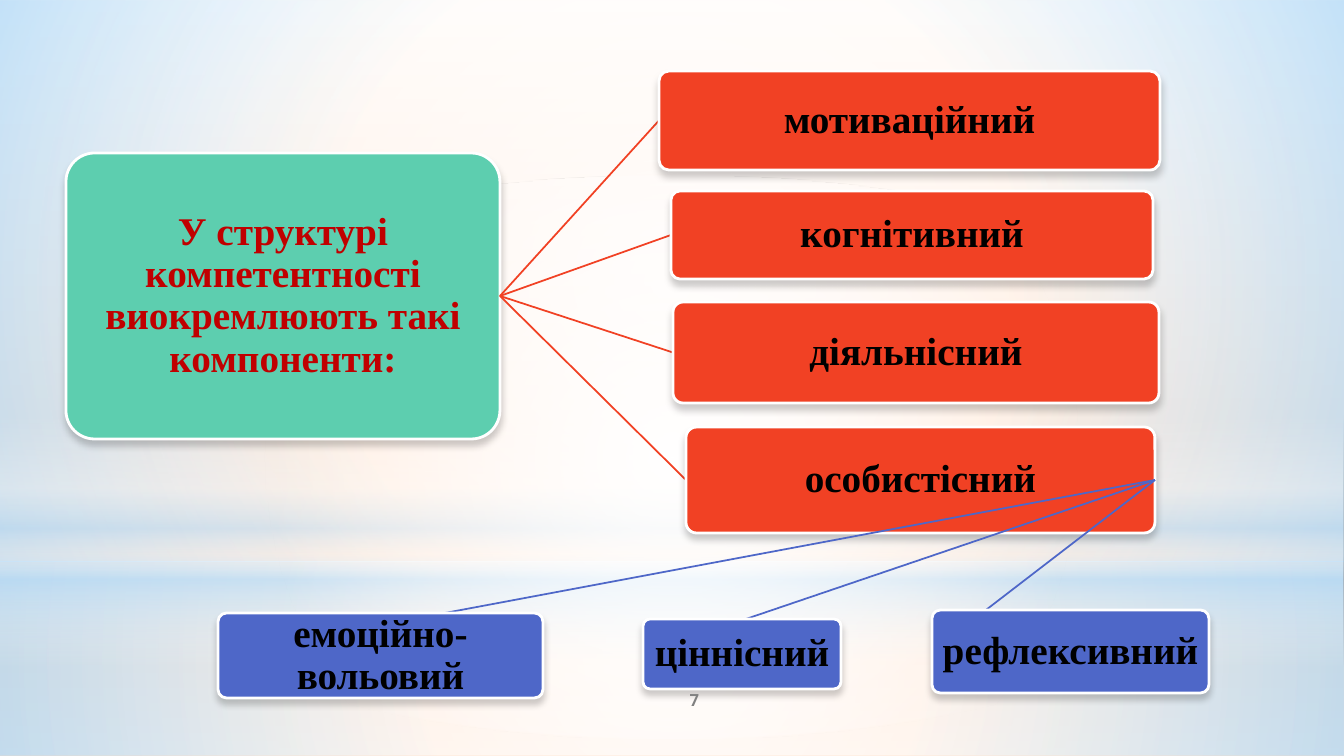
from dataclasses import dataclass
from typing import NamedTuple, Optional

import pptx
import pptx.dml.color
import pptx.enum.shapes
import pptx.enum.text
import pptx.oxml
import pptx.oxml.ns
import pptx.util
from lxml import etree

EMU_PER_PX = 914400 / 100.8
SHAPE = pptx.enum.shapes.MSO_SHAPE
RIGHT_SIDE, LEFT_SIDE = 3, 1


@dataclass(frozen=True)
class Theme:
    root: str = "5DCEAF"
    component: str = "F14124"
    personal: str = "4E67C8"
    outline: str = "FFFFFF"
    heading: str = "C00000"
    label: str = "000000"
    page: str = "808080"
    sky: str = "B4DCFA"
    white: str = "FFFFFF"
    label_font: str = "Times New Roman"
    page_font: str = "Roboto"
    label_size: int = 28
    page_size: int = 12


THEME = Theme()


class Area(NamedTuple):
    left: int
    top: int
    width: int
    height: int

    def emu(self) -> list[pptx.util.Emu]:
        return [px(length) for length in self]


class Stop(NamedTuple):
    position: int
    color: str
    opacity: int = 100


class Glow(NamedTuple):
    kind: int
    area: Area
    stops: list[Stop]
    radial: bool = True


class Node(NamedTuple):
    text: str
    area: Area
    fill: str
    color: str = THEME.label
    children: tuple["Node", ...] = ()


BACKGROUND = [Stop(0, "FFF9F4"), Stop(74, "FFC69B"), Stop(83, "FFC69B"), Stop(100, "FFD9BC")]

GLOWS = [
    Glow(SHAPE.RECTANGLE, Area(0, 562, 1344, 194),
         [Stop(0, THEME.white, 91), Stop(37, THEME.white, 76), Stop(100, THEME.sky, 79)]),
    Glow(SHAPE.RECTANGLE, Area(0, 0, 1344, 562),
         [Stop(0, THEME.white, 89), Stop(48, THEME.white, 62), Stop(100, THEME.sky, 79)]),
    Glow(SHAPE.RECTANGLE, Area(0, 415, 1344, 252),
         [Stop(0, THEME.white, 0), Stop(29, THEME.white, 30), Stop(45, THEME.sky, 40),
          Stop(55, THEME.white, 26), Stop(65, THEME.sky, 60), Stop(100, THEME.white, 0)],
         radial=False),
    Glow(SHAPE.OVAL, Area(0, 176, 1344, 562),
         [Stop(0, THEME.white), Stop(56, THEME.white, 0)]),
]

PERSONAL_PARTS = (
    Node("емоційно-вольовий", Area(218, 613, 325, 85), THEME.personal),
    Node("ціннісний", Area(643, 619, 198, 70), THEME.personal),
    Node("рефлексивний", Area(932, 610, 277, 83), THEME.personal),
)
COMPONENTS = (
    Node("мотиваційний", Area(659, 71, 501, 99), THEME.component),
    Node("когнітивний", Area(671, 191, 482, 88), THEME.component),
    Node("діяльнісний", Area(673, 302, 486, 101), THEME.component),
    Node("особистісний", Area(686, 427, 469, 106), THEME.component, children=PERSONAL_PARTS),
)
ROOT = Node("У структурі компетентності виокремлюють такі компоненти:",
            Area(66, 153, 434, 286), THEME.root, THEME.heading, COMPONENTS)


def px(length: float) -> pptx.util.Emu:
    return pptx.util.Emu(round(length * EMU_PER_PX))


def rgb(color: str) -> pptx.dml.color.RGBColor:
    return pptx.dml.color.RGBColor.from_string(color)


def add_child(parent, tag: str, **attributes):
    return etree.SubElement(parent, pptx.oxml.ns.qn(tag),
                            {name: str(value) for name, value in attributes.items()})


def add_color(parent, color: str, opacity: int) -> None:
    solid = add_child(parent, "a:srgbClr", val=color)
    add_child(solid, "a:alpha", val=opacity * 1000)


def set_gradient(fill, element, stops: list[Stop], radial: bool) -> None:
    """Fill with stops running downwards, or outwards from the centre if radial."""
    fill.gradient()
    gradient = element.find(".//" + pptx.oxml.ns.qn("a:gradFill"))
    for child in list(gradient):
        gradient.remove(child)
    stop_list = add_child(gradient, "a:gsLst")
    for stop in stops:
        add_color(add_child(stop_list, "a:gs", pos=stop.position * 1000),
                  stop.color, stop.opacity)
    if radial:
        circle = add_child(gradient, "a:path", path="circle")
        add_child(circle, "a:fillToRect", l=50000, t=50000, r=50000, b=50000)
    else:
        add_child(gradient, "a:lin", ang=5400000, scaled=0)


def draw_glow(slide, glow: Glow) -> None:
    shape = slide.shapes.add_shape(glow.kind, *glow.area.emu())
    shape.shadow.inherit = False
    shape.line.fill.background()
    set_gradient(shape.fill, shape._element, glow.stops, glow.radial)


def add_shadow(shape) -> None:
    shape.shadow.inherit = False
    effects = shape._element.spPr.find(pptx.oxml.ns.qn("a:effectLst"))
    shadow = add_child(effects, "a:outerShdw", blurRad=pptx.util.Pt(5),
                       dist=pptx.util.Pt(4), dir=5400000, rotWithShape=0)
    add_color(shadow, "000000", 20)


def write(text_frame, text: str, font: str, size: int, color: str) -> None:
    text_frame.word_wrap = True
    text_frame.vertical_anchor = pptx.enum.text.MSO_ANCHOR.MIDDLE
    text_frame.text = text
    paragraph = text_frame.paragraphs[0]
    paragraph.alignment = pptx.enum.text.PP_ALIGN.CENTER
    run_font = paragraph.runs[0].font
    run_font.name, run_font.size, run_font.bold = font, pptx.util.Pt(size), True
    run_font.color.rgb = rgb(color)


def draw_box(slide, node: Node):
    box = slide.shapes.add_shape(SHAPE.ROUNDED_RECTANGLE, *node.area.emu())
    box.adjustments[0] = 0.1
    box.fill.solid()
    box.fill.fore_color.rgb = rgb(node.fill)
    box.line.color.rgb = rgb(THEME.outline)
    box.line.width = pptx.util.Pt(2)
    add_shadow(box)
    frame = box.text_frame
    frame.margin_left = frame.margin_right = frame.margin_top = frame.margin_bottom = px(2)
    write(frame, node.text, THEME.label_font, THEME.label_size, node.color)
    frame.paragraphs[0].line_spacing = 0.9
    return box


def draw_branch(slide, node: Node, parent: Optional[object] = None) -> None:
    """Draw a node over the line from its parent, then everything below it."""
    link = None
    if parent is not None:
        link = slide.shapes.add_connector(pptx.enum.shapes.MSO_CONNECTOR.STRAIGHT, 0, 0, 0, 0)
        link.line.color.rgb = rgb(node.fill)
        link.line.width = pptx.util.Pt(1.25)
        add_child(link._element.spPr, "a:effectLst")
    box = draw_box(slide, node)
    if link is not None:
        link.begin_connect(parent, RIGHT_SIDE)
        link.end_connect(box, LEFT_SIDE)
    for child in node.children:
        draw_branch(slide, child, box)


def main() -> None:
    presentation = pptx.Presentation()
    presentation.slide_width, presentation.slide_height = px(1344), px(756)
    slide = presentation.slides.add_slide(presentation.slide_layouts[6])
    set_gradient(slide.background.fill, slide._element, BACKGROUND, radial=False)
    for glow in GLOWS:
        draw_glow(slide, glow)
    draw_branch(slide, ROOT)
    page_number = slide.shapes.add_textbox(*Area(560, 680, 269, 40).emu())
    write(page_number.text_frame, "7", THEME.page_font, THEME.page_size, THEME.page)
    presentation.save("out.pptx")


if __name__ == "__main__":
    main()
